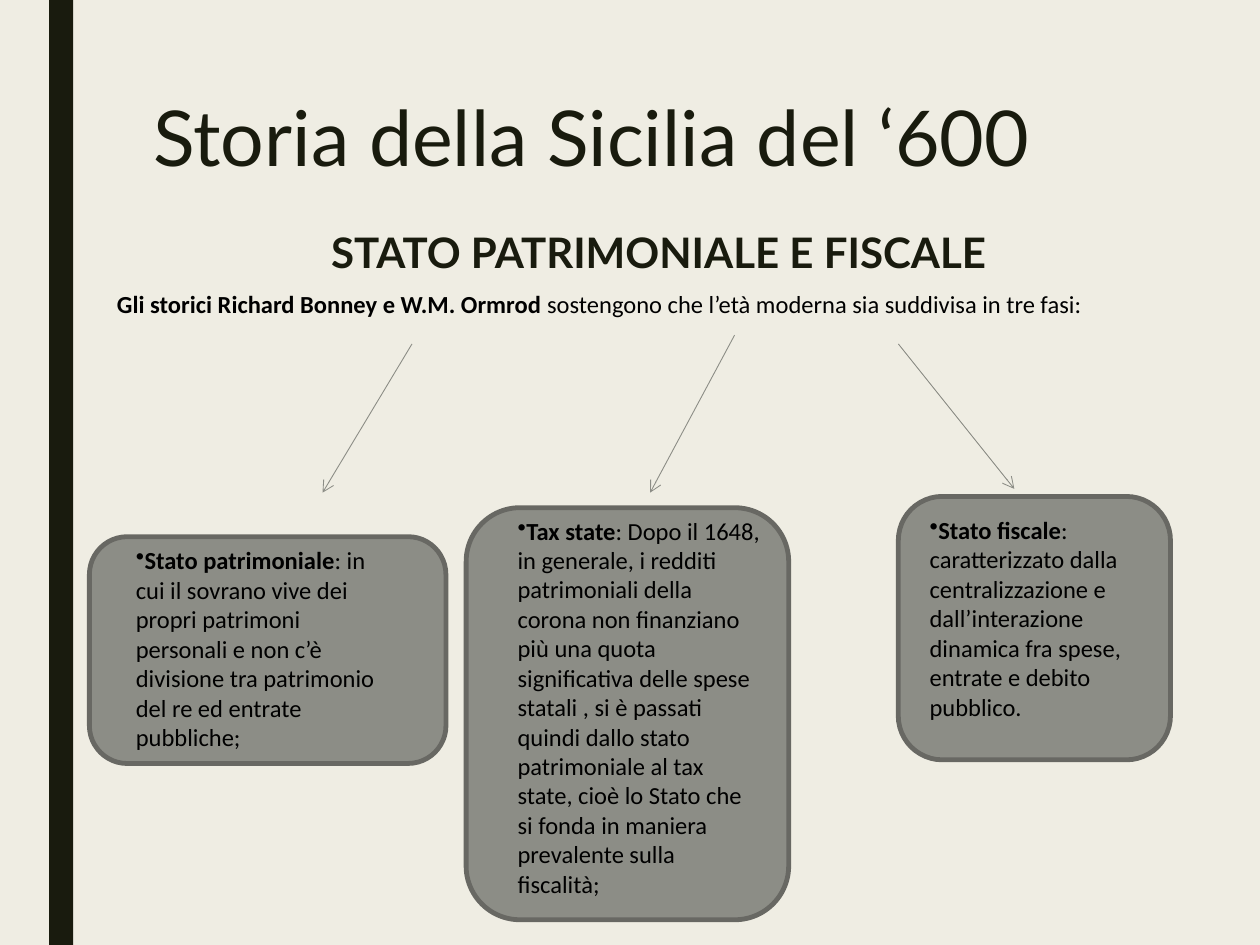
from pptx import Presentation
from pptx.dml.color import RGBColor as Rgb
from pptx.enum.shapes import MSO_CONNECTOR as Conn, MSO_SHAPE as Kind
from pptx.enum.text import MSO_ANCHOR as Anchor
from pptx.oxml.ns import qn
from pptx.util import Inches, Pt
from lxml.etree import SubElement as Sub

HUES = {"back": "EFEDE3", "dark": "191B0E", "text": "000000",
        "box": "8C8D86", "edge": "686863"}


class Page:
    """Holds the style and the current slide."""
    head = "Lato"
    body = "Calibri"
    size = 14

    def __init__(self, slide):
        self.slide = slide
        fill = slide.background.fill
        fill.solid()
        fill.fore_color.rgb = self.hue("back")

    def hue(self, name):
        return Rgb.from_string(HUES[name])

    def shape(self, kind, area, fill, edge=None):
        item = self.slide.shapes.add_shape(kind, *map(Inches, area))
        item.shadow.inherit = False
        item.fill.solid()
        item.fill.fore_color.rgb = self.hue(fill)
        if edge:
            item.line.color.rgb = self.hue(edge)
            item.line.width = Pt(2.75)
        else:
            item.line.fill.background()

    def arrow(self, start, end):
        line = self.slide.shapes.add_connector(
            Conn.STRAIGHT, *map(Inches, start + end))
        line.line.color.rgb = self.hue("box")
        line.line.width = Pt(0.5)
        Sub(line.line._get_or_add_ln(), qn("a:tailEnd"), type="arrow")
        Sub(line._element.spPr, qn("a:effectLst"))

    def frame(self, area, anchor=Anchor.TOP):
        frame = self.slide.shapes.add_textbox(*map(Inches, area)).text_frame
        frame.word_wrap = True
        frame.vertical_anchor = anchor
        return frame

    def style(self, run, font, size, hue, bold):
        run.font.name = font
        run.font.size = Pt(size)
        run.font.color.rgb = self.hue(hue)
        run.font.bold = bold

    def title(self, area, text, size, space, bold=False):
        frame = self.frame(area)
        frame.text = text
        para = frame.paragraphs[0]
        para.line_spacing = space
        self.style(para.runs[0], self.head, size, "dark", bold)

    def note(self, area, lead, rest, anchor=Anchor.MIDDLE, bullet=False):
        para = self.frame(area, anchor).paragraphs[0]
        if bullet:
            Sub(para._p.get_or_add_pPr(), qn("a:buChar"), char="•")
        for text, bold in ((lead, True), (rest, False)):
            run = para.add_run()
            run.text = text
            self.style(run, self.body, self.size, "text", bold)


def main():
    deck = Presentation()
    deck.slide_width, deck.slide_height = Inches(10), Inches(7.5)
    page = Page(deck.slides.add_slide(deck.slide_layouts[6]))

    # Side bar and headings
    page.shape(Kind.RECTANGLE, (0.39, 0, 0.19, 7.5), "dark")
    page.title((1.12, 0.75, 7.88, 1), "Storia della Sicilia del ‘600", 44, 0.89)
    page.title((2.53, 1.78, 6.5, 0.5), "STATO PATRIMONIALE E FISCALE",
               24, 0.94, True)
    page.note((0.83, 2.16, 8.8, 0.5),
              "Gli storici Richard Bonney e W.M. Ormrod ",
              "sostengono che l’età moderna sia suddivisa in tre fasi:")

    # Arrows to the three phases
    for start, end in (((3.27, 2.73), (2.56, 3.91)),
                       ((5.83, 2.66), (5.16, 3.91)),
                       ((7.13, 2.73), (8.05, 3.88))):
        page.arrow(start, end)

    # Phases: box, text area, anchor, name, description
    phases = (
        ((0.71, 4.26, 2.83, 1.8), (0.98, 4.28, 2.2, 1.75), Anchor.TOP,
         "Stato patrimoniale",
         ": in cui il sovrano vive dei propri patrimoni personali e non c’è "
         "divisione tra patrimonio del re ed entrate pubbliche;"),
        ((3.7, 4.03, 2.56, 3.27), (4.01, 4.03, 2.13, 3.16), Anchor.MIDDLE,
         "Tax state",
         ": Dopo il 1648, in generale, i redditi patrimoniali della corona "
         "non finanziano più una quota significativa delle spese statali , "
         "si è passati quindi dallo stato patrimoniale al tax state, cioè lo "
         "Stato che si fonda in maniera prevalente sulla fiscalità;"),
        ((7.13, 3.94, 2.16, 2.09), (7.28, 4.03, 2.13, 1.75), Anchor.MIDDLE,
         "Stato fiscale",
         ": caratterizzato dalla centralizzazione e dall’interazione "
         "dinamica fra spese, entrate e debito pubblico."),
    )
    for box, area, anchor, name, rest in phases:
        page.shape(Kind.ROUNDED_RECTANGLE, box, "box", "edge")
        page.note(area, name, rest, anchor, bullet=True)

    deck.save("out.pptx")


if __name__ == "__main__":
    main()
